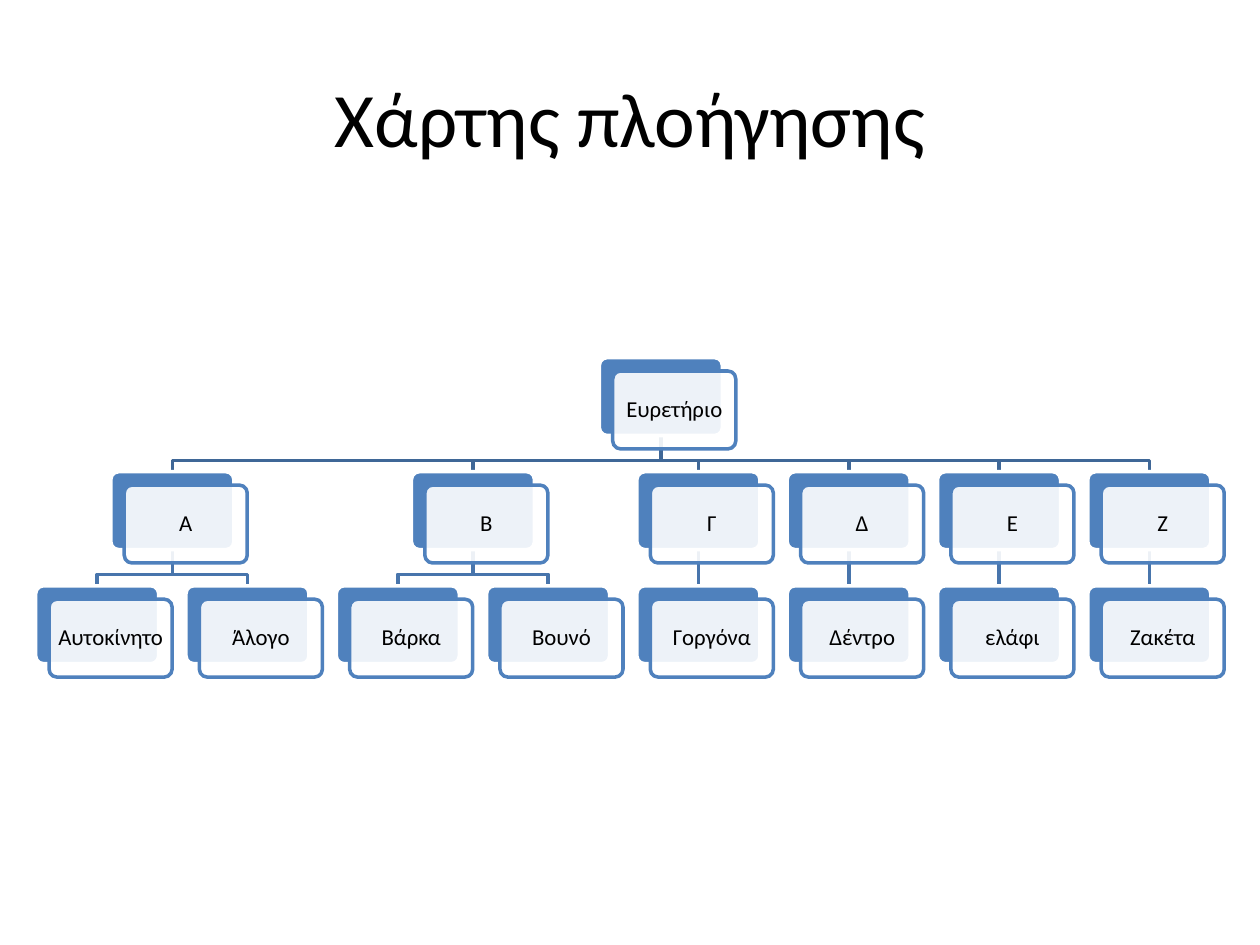
from dataclasses import dataclass, field
from typing import Iterator, Optional

from lxml.etree import SubElement
from pptx import Presentation
from pptx.dml.color import RGBColor
from pptx.enum.shapes import MSO_CONNECTOR, MSO_SHAPE
from pptx.enum.text import MSO_ANCHOR, PP_ALIGN
from pptx.oxml.ns import qn
from pptx.shapes.autoshape import Shape
from pptx.shapes.connector import Connector
from pptx.slide import Slide
from pptx.text.text import TextFrame
from pptx.util import Cm, Pt

FONT = "Calibri"
BLUE = "4F81BD"
WHITE = "FFFFFF"
LINK_COLOURS = ["3F6797", "4875AC"]
LINE_WIDTH = Pt(2)

FIRST_LEFT, FIRST_TOP = 0.72, 7.21
COLUMN_STEP, LEVEL_STEP = 3.03, 2.3
CARD_WIDTH, CARD_HEIGHT = 2.48, 1.57
FRONT_OFFSET = 0.27
BEND_GAP = 0.23


@dataclass
class Node:
    label: str
    children: list["Node"] = field(default_factory=list)
    level: int = 0
    column: float = 0
    back: Optional[Shape] = None
    link: Optional[Connector] = None

    @property
    def left(self) -> float:
        return FIRST_LEFT + self.column * COLUMN_STEP

    @property
    def top(self) -> float:
        return FIRST_TOP + self.level * LEVEL_STEP

    @property
    def centre(self) -> float:
        return self.left + CARD_WIDTH / 2

    @property
    def bottom(self) -> float:
        return self.top + CARD_HEIGHT


INDEX = Node("Ευρετήριο", [
    Node("Α", [Node("Αυτοκίνητο"), Node("Άλογο")]),
    Node("Β", [Node("Βάρκα"), Node("Βουνό")]),
    Node("Γ", [Node("Γοργόνα")]),
    Node("Δ", [Node("Δέντρο")]),
    Node("Ε", [Node("ελάφι")]),
    Node("Ζ", [Node("Ζακέτα")]),
])


def colour(value: str) -> RGBColor:
    return RGBColor.from_string(value)


def walk(node: Node) -> Iterator[Node]:
    yield node
    for child in node.children:
        yield from walk(child)


def arrange(node: Node, level: int = 0, next_column: int = 0) -> int:
    node.level = level
    if not node.children:
        node.column = next_column
        return next_column + 1
    for child in node.children:
        next_column = arrange(child, level + 1, next_column)
    node.column = (node.children[0].column + node.children[-1].column) / 2
    return next_column


def write(frame: TextFrame, text: str, size: float) -> None:
    frame.text = text
    frame.word_wrap = True
    frame.vertical_anchor = MSO_ANCHOR.MIDDLE
    para = frame.paragraphs[0]
    para.alignment = PP_ALIGN.CENTER
    for span in para.runs:
        span.font.name = FONT
        span.font.size = Pt(size)
        span.font.color.rgb = colour("000000")


def draw_title(page: Slide, text: str) -> None:
    box = page.shapes.add_textbox(Cm(1.27), Cm(0.76), Cm(22.86), Cm(3.18))
    write(box.text_frame, text, 44)


def draw_straight_link(page: Slide, parent: Node, child: Node) -> Connector:
    link = page.shapes.add_connector(
        MSO_CONNECTOR.STRAIGHT,
        Cm(parent.centre), Cm(parent.bottom), Cm(child.centre), Cm(child.top))
    SubElement(link._element.spPr, qn("a:effectLst"))
    return link


def draw_bent_link(page: Slide, parent: Node, child: Node) -> Shape:
    bend = Cm(child.top - BEND_GAP)
    builder = page.shapes.build_freeform(Cm(parent.centre), Cm(parent.bottom))
    builder.add_line_segments([
        (Cm(parent.centre), bend),
        (Cm(child.centre), bend),
        (Cm(child.centre), Cm(child.top)),
    ], close=False)
    link = builder.convert_to_shape()
    link.fill.background()
    link.shadow.inherit = False
    return link


def draw_links(page: Slide, parent: Node) -> None:
    for child in parent.children:
        if len(parent.children) == 1:
            link = child.link = draw_straight_link(page, parent, child)
        else:
            link = draw_bent_link(page, parent, child)
        link.line.color.rgb = colour(LINK_COLOURS[parent.level])
        link.line.width = LINE_WIDTH


def draw_card(page: Slide, left: float, top: float, fill: str, line: str) -> Shape:
    card = page.shapes.add_shape(
        MSO_SHAPE.ROUNDED_RECTANGLE, Cm(left), Cm(top), Cm(CARD_WIDTH), Cm(CARD_HEIGHT))
    card.adjustments[0] = 0.1
    card.shadow.inherit = False
    card.fill.solid()
    card.fill.fore_color.rgb = colour(fill)
    card.line.color.rgb = colour(line)
    card.line.width = LINE_WIDTH
    return card


def draw_node(page: Slide, node: Node) -> None:
    node.back = draw_card(page, node.left, node.top, BLUE, WHITE)
    front = draw_card(page, node.left + FRONT_OFFSET, node.top + FRONT_OFFSET, WHITE, BLUE)
    fill_colour = front._element.spPr.find(qn("a:solidFill")).find(qn("a:srgbClr"))
    SubElement(fill_colour, qn("a:alpha"), val="90000")
    frame = front.text_frame
    frame.margin_left = frame.margin_right = Cm(0.08)
    frame.margin_top = frame.margin_bottom = Cm(0.08)
    write(frame, node.label, 13)
    frame.paragraphs[0].line_spacing = 0.9


def join_links(parent: Node) -> None:
    for child in parent.children:
        if child.link is not None:
            child.link.begin_connect(parent.back, 2)
            child.link.end_connect(child.back, 0)


def main() -> None:
    deck = Presentation()
    deck.slide_width, deck.slide_height = Cm(25.4), Cm(19.05)
    page = deck.slides.add_slide(deck.slide_layouts[6])
    draw_title(page, "Χάρτης πλοήγησης")
    arrange(INDEX)
    nodes = list(walk(INDEX))
    for node in nodes:
        draw_links(page, node)
    for node in nodes:
        draw_node(page, node)
    for node in nodes:
        join_links(node)
    deck.save("out.pptx")


if __name__ == "__main__":
    main()
